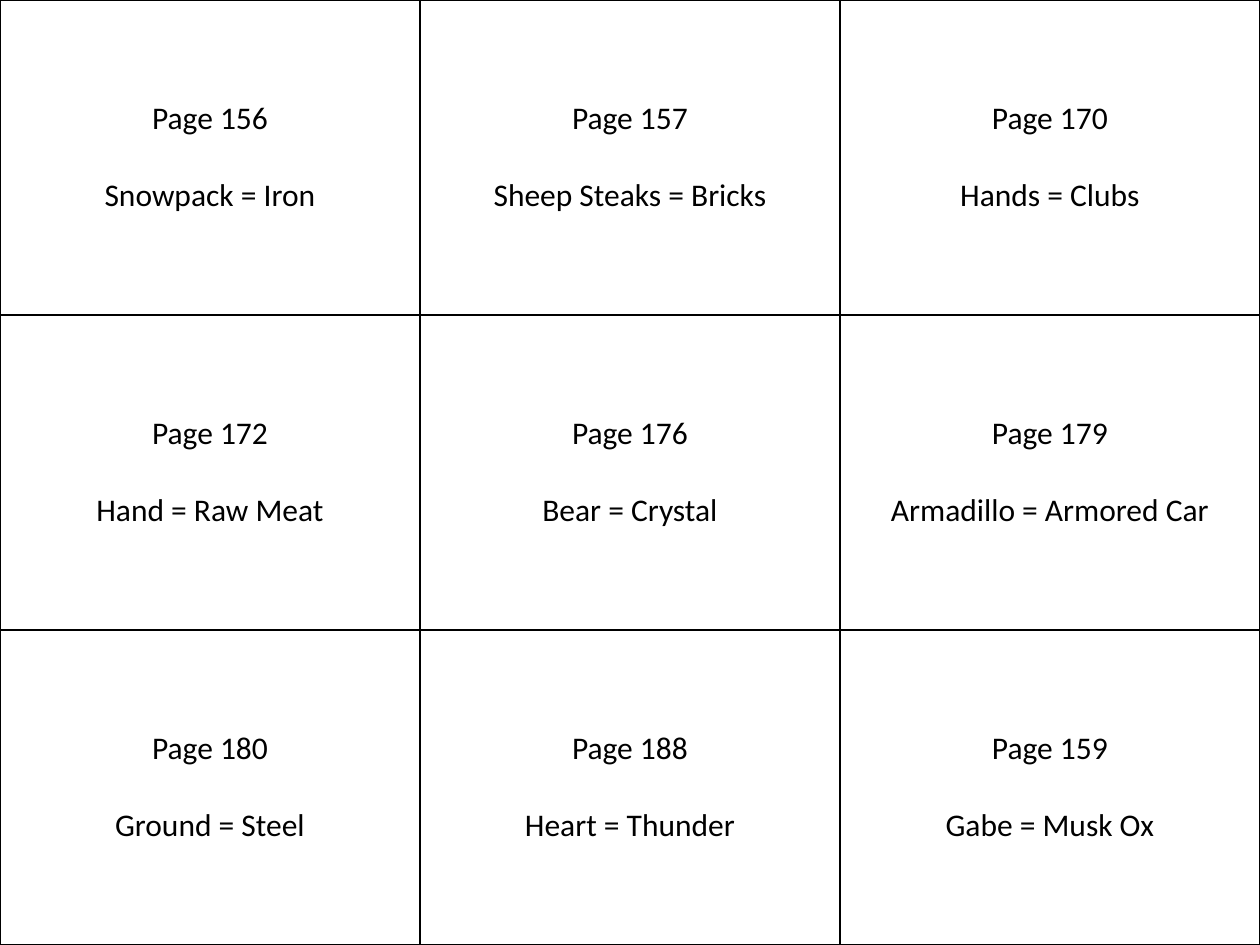
"""Build a slide with a three by three grid of page and word-pair cards."""
import pptx
import pptx.dml.color
import pptx.enum.text
import pptx.oxml
import pptx.oxml.ns
import pptx.util

CARDS = [
    [("Page 156", "Snowpack = Iron"), ("Page 157", "Sheep Steaks = Bricks"),
     ("Page 170", "Hands = Clubs")],
    [("Page 172", "Hand = Raw Meat"), ("Page 176", "Bear = Crystal"),
     ("Page 179", "Armadillo = Armored Car")],
    [("Page 180", "Ground = Steel"), ("Page 188", "Heart = Thunder"),
     ("Page 159", "Gabe = Musk Ox")],
]
WIDTH, HEIGHT = 1260, 945
BLACK, WHITE = "000000", "FFFFFF"
FONT, SIZE, LINE_GAP = "Calibri", 18, 22


def px(n):
    """Turn pixels into EMU."""
    return pptx.util.Emu(n * 914400 // 126)


def rgb(color):
    """Turn a hex string into a colour."""
    return pptx.dml.color.RGBColor.from_string(color)


def add_borders(cell):
    """Draw a one-point line on every side of a cell."""
    tc_pr = cell._tc.get_or_add_tcPr()
    for i, side in enumerate(("lnL", "lnR", "lnT", "lnB")):
        tc_pr.insert(i, pptx.oxml.parse_xml(
            f'<a:{side} {pptx.oxml.ns.nsdecls("a")} w="{pptx.util.Pt(1)}">'
            f'<a:solidFill><a:srgbClr val="{BLACK}"/></a:solidFill></a:{side}>'))


def fill_card(cell, lines):
    """Write the lines of a card and format its cell."""
    cell.fill.solid()
    cell.fill.fore_color.rgb = rgb(WHITE)
    cell.vertical_anchor = pptx.enum.text.MSO_ANCHOR.MIDDLE
    add_borders(cell)
    tf = cell.text_frame
    for i, text in enumerate(lines):
        p = tf.add_paragraph() if i else tf.paragraphs[0]
        p.alignment = pptx.enum.text.PP_ALIGN.CENTER
        p.space_before = pptx.util.Pt(LINE_GAP if i else 0)
        r = p.add_run()
        r.text = text
        r.font.name = FONT
        r.font.size = pptx.util.Pt(SIZE)
        r.font.color.rgb = rgb(BLACK)


def main():
    """Build and save the slide."""
    prs = pptx.Presentation()
    prs.slide_width, prs.slide_height = px(WIDTH), px(HEIGHT)
    s = prs.slides.add_slide(prs.slide_layouts[6])
    table = s.shapes.add_table(len(CARDS), len(CARDS[0]), 0, 0,
                               px(WIDTH), px(HEIGHT)).table
    table.first_row = table.horz_banding = False
    for i, row in enumerate(CARDS):
        for j, lines in enumerate(row):
            fill_card(table.cell(i, j), lines)
    prs.save("out.pptx")


if __name__ == "__main__":
    main()
